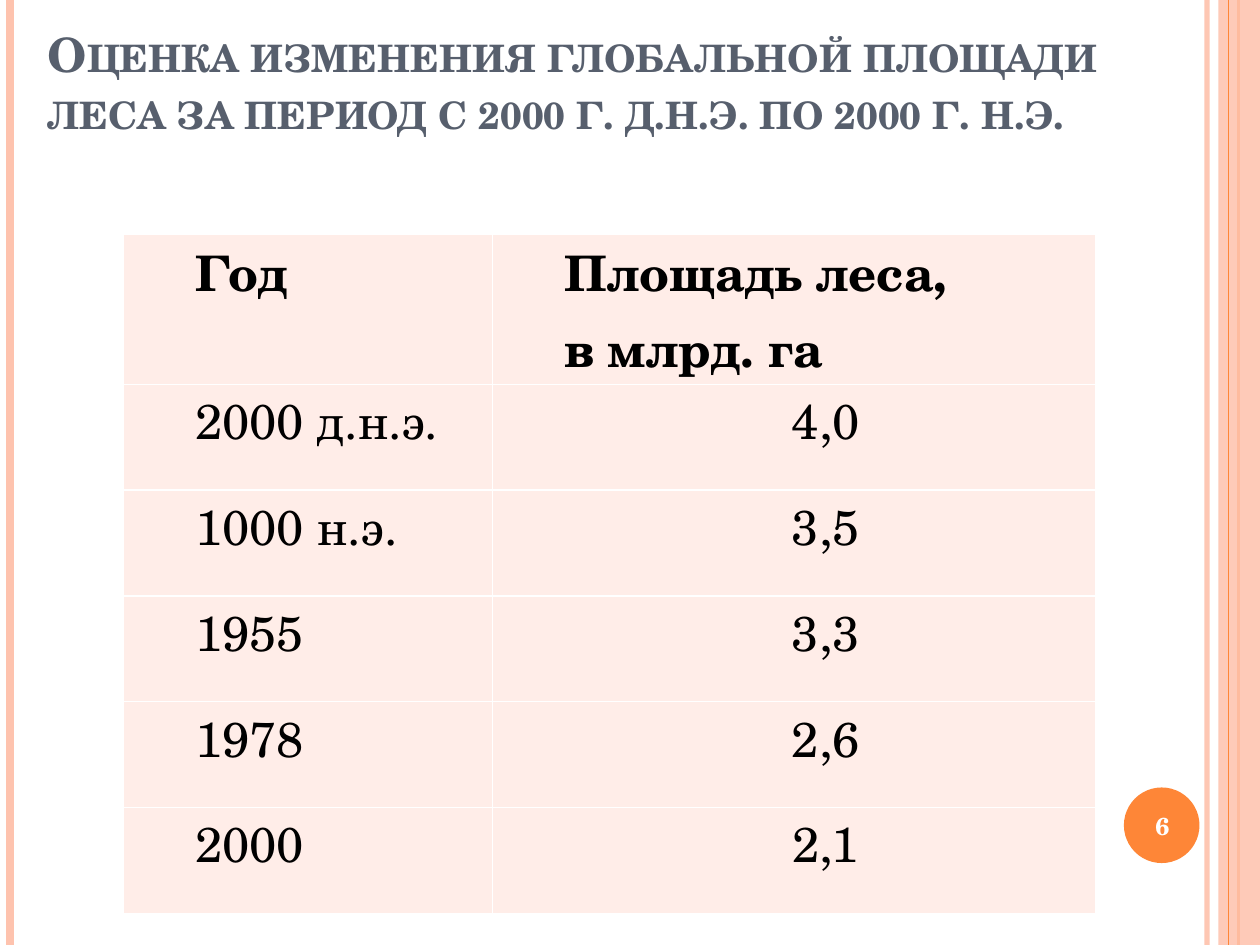
"""Build the slide on the change in global forest area."""
import lxml.etree
import pptx
import pptx.dml.color
import pptx.enum.shapes
import pptx.enum.text
import pptx.oxml.ns
import pptx.util

Inches = pptx.util.Inches
Pt = pptx.util.Pt
qn = pptx.oxml.ns.qn
ALIGN = pptx.enum.text.PP_ALIGN
ANCHOR = pptx.enum.text.MSO_ANCHOR
SHAPE = pptx.enum.shapes.MSO_SHAPE

WIDTH, HEIGHT = 10, 7.5
FONT = "TeX Gyre Schola"
ORANGE, PEACH, PALE, SLATE = "FE8637", "FEC3AE", "FFEDE8", "575F6D"
WHITE, BLACK = "FFFFFF", "000000"

TITLE = "Оценка изменения глобальной площади леса за период с 2000 г. д.н.э. по 2000 г. н.э."
PAGE = "6"
ROWS = [
    ("Год", "Площадь леса, \nв млрд. га"),
    ("2000 д.н.э.", "4,0"),
    ("1000 н.э.", "3,5"),
    ("1955", "3,3"),
    ("1978", "2,6"),
    ("2000", "2,1"),
]
STRIPES = [(9.58, PEACH, 3, 93), (0.08, PEACH, 4.5, 100), (9.83, ORANGE, 1.5, 100)]
THIN_STRIPE = (9.75, ORANGE, 0.75, 100)
TABLE_LEFT, TABLE_TOP = 0.98, 1.86
COLUMNS = (2.93, 4.79)
HEADER_HEIGHT, ROW_HEIGHT = 1.19, 0.84


def rgb(value):
    return pptx.dml.color.RGBColor.from_string(value)


def set_alpha(element, percent):
    if percent < 100:
        color = next(element.iter(qn("a:srgbClr")))
        lxml.etree.SubElement(color, qn("a:alpha"), val=str(percent * 1000))


def format_runs(paragraph, size, color, bold):
    for run in paragraph.runs:
        run.font.name = FONT
        run.font.size = Pt(size)
        run.font.bold = bold
        run.font.color.rgb = rgb(color)


def add_stripe(slide, x, color, width, opacity):
    line = slide.shapes.add_connector(
        pptx.enum.shapes.MSO_CONNECTOR.STRAIGHT, Inches(x), 0, Inches(x), Inches(HEIGHT))
    line.line.color.rgb = rgb(color)
    line.line.width = Pt(width)
    properties = line._element.spPr
    set_alpha(properties, opacity)
    lxml.etree.SubElement(properties, qn("a:effectLst"))


def add_filled(slide, kind, box, color, opacity=100):
    shape = slide.shapes.add_shape(kind, *map(Inches, box))
    shape.shadow.inherit = False
    shape.fill.solid()
    shape.fill.fore_color.rgb = rgb(color)
    shape.line.fill.background()
    set_alpha(shape._element.spPr, opacity)


def add_title(slide):
    title = slide.shapes.title
    title.left, title.top, title.width, title.height = map(Inches, (0.28, 0.21, 9.21, 0.94))
    frame = title.text_frame
    frame.text = TITLE
    frame.word_wrap = True
    frame.auto_size = pptx.enum.text.MSO_AUTO_SIZE.NONE
    frame.vertical_anchor = ANCHOR.BOTTOM
    paragraph = frame.paragraphs[0]
    paragraph.alignment = ALIGN.LEFT
    format_runs(paragraph, 27, SLATE, True)
    paragraph.runs[0].font._element.set("cap", "small")


def add_page_number(slide):
    frame = slide.shapes.add_textbox(*map(Inches, (8.89, 6.27, 0.67, 0.57))).text_frame
    frame.text = PAGE
    frame.word_wrap = True
    frame.vertical_anchor = ANCHOR.MIDDLE
    frame.paragraphs[0].alignment = ALIGN.CENTER
    format_runs(frame.paragraphs[0], 14, WHITE, True)


def add_borders(cell):
    properties = cell._tc.get_or_add_tcPr()
    for index, side in enumerate(("a:lnL", "a:lnR", "a:lnT", "a:lnB")):
        border = lxml.etree.Element(qn(side), w=str(Pt(1)))
        fill = lxml.etree.SubElement(border, qn("a:solidFill"))
        lxml.etree.SubElement(fill, qn("a:srgbClr"), val=WHITE)
        properties.insert(index, border)


def fill_cell(cell, text, header, centered):
    cell.text = text
    cell.margin_left = cell.margin_right = Inches(0.07)
    cell.margin_top = cell.margin_bottom = 0
    cell.fill.solid()
    cell.fill.fore_color.rgb = rgb(PALE)
    add_borders(cell)
    for paragraph in cell.text_frame.paragraphs:
        paragraph.alignment = ALIGN.CENTER if centered else ALIGN.JUSTIFY
        paragraph._p.get_or_add_pPr().set("indent", str(Inches(0.5)))
        format_runs(paragraph, 28, BLACK, header)


def add_forest_table(slide):
    heights = [HEADER_HEIGHT] + [ROW_HEIGHT] * (len(ROWS) - 1)
    table = slide.shapes.add_table(
        len(ROWS), len(COLUMNS), Inches(TABLE_LEFT), Inches(TABLE_TOP),
        Inches(sum(COLUMNS)), Inches(sum(heights))).table
    for column, width in zip(table.columns, COLUMNS):
        column.width = Inches(width)
    for r, (values, height) in enumerate(zip(ROWS, heights)):
        table.rows[r].height = Inches(height)
        for c, text in enumerate(values):
            fill_cell(table.cell(r, c), text, r == 0, r > 0 and c == 1)


def main():
    presentation = pptx.Presentation()
    presentation.slide_width = Inches(WIDTH)
    presentation.slide_height = Inches(HEIGHT)
    slide = presentation.slides.add_slide(presentation.slide_layouts[5])
    for stripe in STRIPES:
        add_stripe(slide, *stripe)
    add_filled(slide, SHAPE.RECTANGLE, (9.67, 0, 0.33, HEIGHT), PEACH, 87)
    add_stripe(slide, *THIN_STRIPE)
    add_filled(slide, SHAPE.OVAL, (8.92, 6.25, 0.6, 0.6), ORANGE)
    add_title(slide)
    add_page_number(slide)
    add_forest_table(slide)
    presentation.save("out.pptx")


if __name__ == "__main__":
    main()
